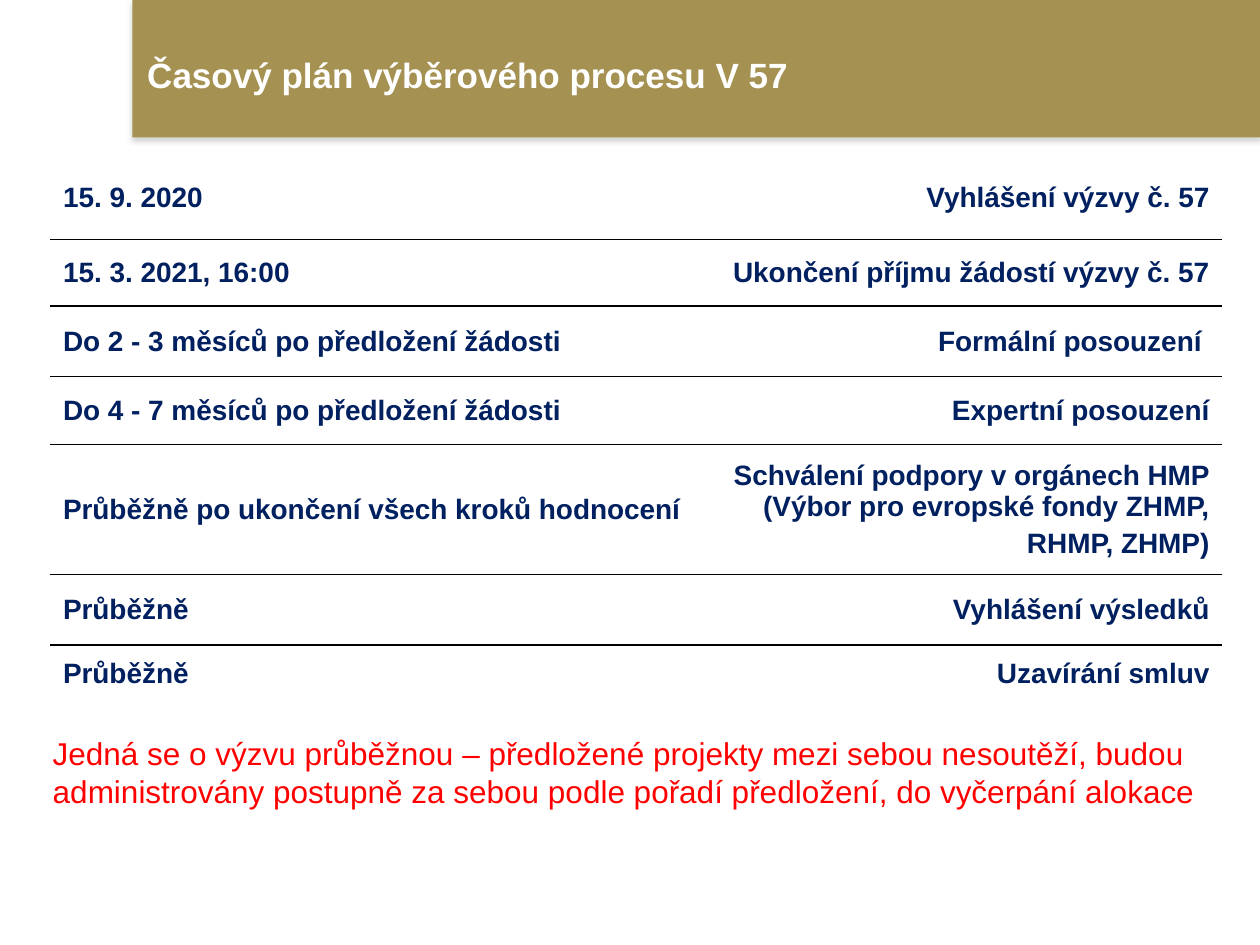
"""Build the selection process timetable slide for call V 57."""
from lxml import etree
from pptx import Presentation
from pptx.dml.color import RGBColor
from pptx.enum import shapes, text
from pptx.oxml import parse_xml
from pptx.oxml.ns import nsdecls
from pptx.util import Inches, Pt

TITLE = "Časový plán výběrového procesu V 57"
SCHEDULE = [
    ("15. 9. 2020", ["Vyhlášení výzvy č. 57"], 0.66),
    ("15. 3. 2021, 16:00", ["Ukončení příjmu žádostí výzvy č. 57"], 0.53),
    ("Do 2 - 3 měsíců po předložení žádosti", ["Formální posouzení "], 0.56),
    ("Do 4 - 7 měsíců po předložení žádosti", ["Expertní posouzení"], 0.54),
    ("Průběžně po ukončení všech kroků hodnocení",
     ["Schválení podpory v orgánech HMP (Výbor pro evropské fondy ZHMP,", "RHMP, ZHMP)"], 1.03),
    ("Průběžně", ["Vyhlášení výsledků"], 0.56),
    ("Průběžně", ["Uzavírání smluv"], 0.45),
]
NOTE = ("Jedná se o výzvu průběžnou – předložené projekty mezi sebou nesoutěží, budou "
        "administrovány postupně za sebou podle pořadí předložení, do vyčerpání alokace")

COLUMNS = (5.27, 4.03)
THEME = {"font": "Arial", "band": "A59253", "title": "FFFFFF", "schedule": "002060",
         "note": "FF0000", "rule": "000000", "shadow": "808080",
         "title_size": 20, "schedule_size": 16, "note_size": 18, "rule_width": 1}
PLAIN_STYLE = "{2D5ABB26-0587-4C30-8999-92F81FD0307C}"


def write(frame, paragraphs, role, bold=False, align=text.PP_ALIGN.LEFT,
          anchor=text.MSO_ANCHOR.TOP, spacing=None, gap=0):
    frame.word_wrap = True
    frame.vertical_anchor = anchor
    for index, words in enumerate(paragraphs):
        paragraph = frame.add_paragraph() if index else frame.paragraphs[0]
        paragraph.alignment = align
        paragraph.line_spacing = spacing
        if index:
            paragraph.space_before = Pt(gap)
        run = paragraph.add_run()
        run.text = words
        run.font.name = THEME["font"]
        run.font.size = Pt(THEME[role + "_size"])
        run.font.bold = bold
        run.font.color.rgb = RGBColor.from_string(THEME[role])


def add_band(slide):
    band = slide.shapes.add_shape(shapes.MSO_SHAPE.RECTANGLE, Inches(1.05), 0,
                                  Inches(8.95), Inches(1.09))
    band.fill.solid()
    band.fill.fore_color.rgb = RGBColor.from_string(THEME["band"])
    band.line.fill.background()
    band.shadow.inherit = False
    effects = band._element.spPr.find("{*}effectLst")
    effects.append(parse_xml(
        f'<a:outerShdw {nsdecls("a")} blurRad="{Pt(3.1)}" dist="{Pt(1.8)}" dir="5400000" '
        f'rotWithShape="0"><a:srgbClr val="{THEME["shadow"]}"><a:alpha val="35000"/>'
        '</a:srgbClr></a:outerShdw>'))


def add_rule(cell, side):
    rule = parse_xml(
        f'<a:{side} {nsdecls("a")} w="{Pt(THEME["rule_width"])}"><a:solidFill>'
        f'<a:srgbClr val="{THEME["rule"]}"/></a:solidFill></a:{side}>')
    cell._tc.get_or_add_tcPr().insert(0, rule)


def add_schedule(slide):
    heights = [height for _, _, height in SCHEDULE]
    table = slide.shapes.add_table(len(SCHEDULE), len(COLUMNS), Inches(0.4), Inches(1.24),
                                   Inches(sum(COLUMNS)), Inches(sum(heights))).table
    table.first_row = table.horz_banding = False
    table._tbl.tblPr.find("{*}tableStyleId").text = PLAIN_STYLE
    for column, width in zip(table.columns, COLUMNS):
        column.width = Inches(width)
    for index, (date, step, height) in enumerate(SCHEDULE):
        row = table.rows[index]
        row.height = Inches(height)
        sides = ((([date]), text.PP_ALIGN.LEFT), (step, text.PP_ALIGN.RIGHT))
        for cell, (words, align) in zip(row.cells, sides):
            cell.fill.background()
            cell.vertical_anchor = text.MSO_ANCHOR.MIDDLE
            write(cell.text_frame, words, "schedule", bold=True, align=align,
                  anchor=None, gap=3.2)
            if index < len(SCHEDULE) - 1:
                add_rule(cell, "lnB")
            if index:
                add_rule(cell, "lnT")


def add_words(slide, words, place, role, **layout):
    box = slide.shapes.add_textbox(*map(Inches, place))
    write(box.text_frame, [words], role, **layout)


def main():
    deck = Presentation()
    deck.slide_width, deck.slide_height = Inches(10), Inches(7.5)
    slide = deck.slides.add_slide(deck.slide_layouts[6])
    add_band(slide)
    add_words(slide, TITLE, (1.07, -0.11, 8.62, 1.45), "title", bold=True,
              anchor=text.MSO_ANCHOR.MIDDLE, spacing=0.9)
    add_schedule(slide)
    add_words(slide, NOTE, (0.32, 5.78, 9.52, 0.71), "note")
    deck.save("out.pptx")


if __name__ == "__main__":
    main()
